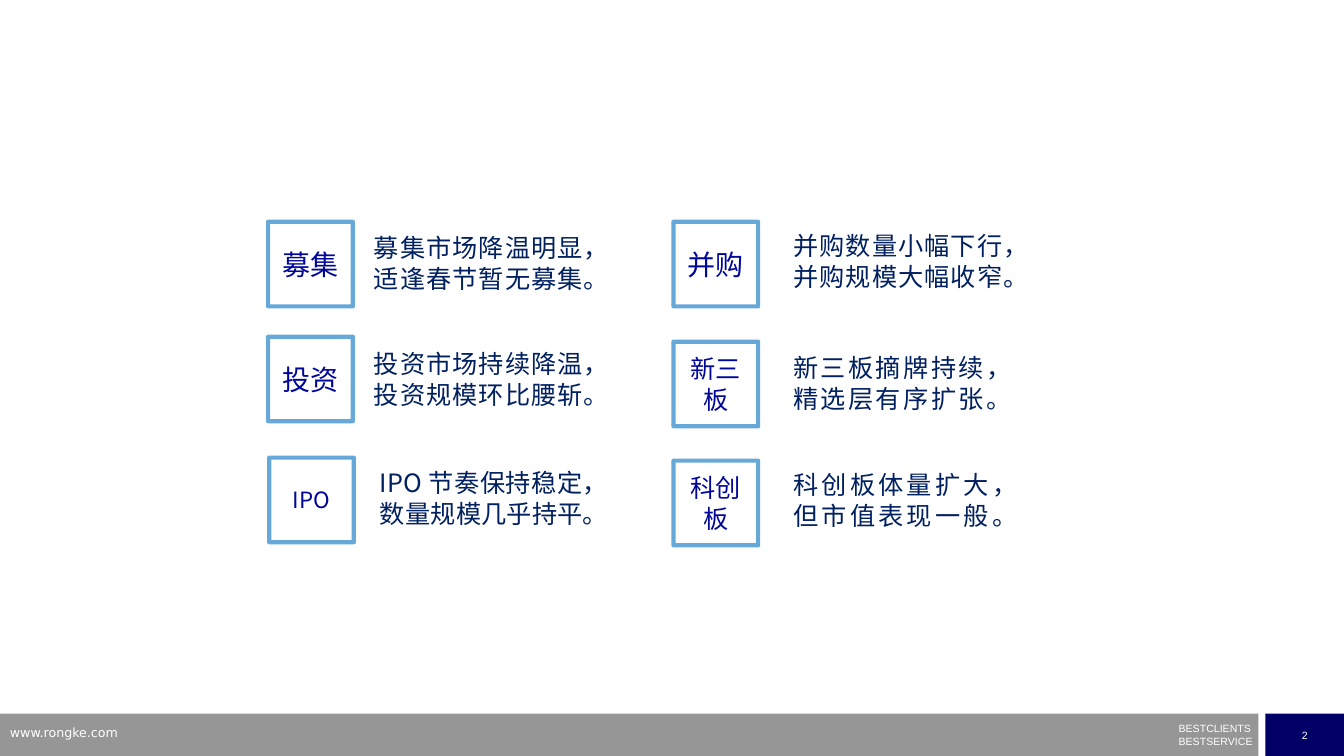
"""Build a market summary slide with six labelled tiles and a footer."""
from lxml.etree import SubElement
from pptx import Presentation
from pptx.dml.color import RGBColor
from pptx.enum.lang import MSO_LANGUAGE_ID
from pptx.enum.shapes import MSO_SHAPE
from pptx.enum.text import MSO_ANCHOR, MSO_AUTO_SIZE, PP_ALIGN
from pptx.oxml.ns import qn
from pptx.util import Inches, Pt

COLORS = {
    "tile": "0070C0", "label": "000798", "text": "002060",
    "bar": "969696", "page": "000066", "white": "FFFFFF",
}


def write(shape, text, size, font, color, align=PP_ALIGN.LEFT):
    frame = shape.text_frame
    frame.text = text
    frame.word_wrap = True
    for para in frame.paragraphs:
        para.alignment = align
        para._p.get_or_add_pPr().set("hangingPunct", "1")
        for run in para.runs:
            run.font.size = Pt(size)
            run.font.name = font
            run.font.color.rgb = RGBColor.from_string(COLORS[color])
            if "CJK" in font:
                run.font.language_id = MSO_LANGUAGE_ID.SIMPLIFIED_CHINESE
                SubElement(run._r.get_or_add_rPr(), qn("a:ea")).set("typeface", font)
    return frame


def block(left, top, width, height, fill=None):
    shape = slide.shapes.add_shape(
        MSO_SHAPE.RECTANGLE, Inches(left), Inches(top), Inches(width), Inches(height))
    shape.shadow.inherit = False
    shape.line.fill.background()
    if fill:
        shape.fill.solid()
        shape.fill.fore_color.rgb = RGBColor.from_string(COLORS[fill])
    else:
        shape.fill.background()
    shape.text_frame.vertical_anchor = MSO_ANCHOR.MIDDLE
    return shape


deck = Presentation()
deck.slide_width, deck.slide_height = Inches(13.33), Inches(7.5)
slide = deck.slides.add_slide(deck.slide_layouts[6])

block(0, 7.08, 12.48, 0.42, "bar")
page = block(12.55, 7.08, 0.78, 0.42, "page")
write(page, "2", 7.5, "Arial", "white", PP_ALIGN.CENTER).word_wrap = False

motto = slide.shapes.add_textbox(Inches(11.69), Inches(7.22), Inches(0.76), Inches(0.2))
frame = write(motto, "BESTCLIENTS\nBESTSERVICE", 7.5, "Arial", "white")
frame.margin_left = frame.margin_right = frame.margin_top = frame.margin_bottom = 0
for para in frame.paragraphs:
    para.line_spacing = 0.5
frame.paragraphs[1].space_before = Pt(4.3)

site = slide.shapes.add_textbox(Inches(0), Inches(7.14), Inches(3.2), Inches(0.26))
write(site, "www.rongke.com", 9, "DejaVu Sans", "white")

topics = [
    ("募集", 20, 2.66, 2.2, "募集市场降温明显，\n适逢春节暂无募集。", 3.61, 2.26, 2.28),
    ("投资", 20, 2.66, 3.34, "投资市场持续降温，\n投资规模环比腰斩。", 3.61, 3.41, 2.28),
    ("IPO", 16, 2.67, 4.54, "IPO 节奏保持稳定，\n数量规模几乎持平。", 3.67, 4.59, 2.21),
    ("并购", 20, 6.68, 2.2, "并购数量小幅下行，\n并购规模大幅收窄。", 7.77, 2.24, 2.28),
    ("新三板", 18, 6.68, 3.39, "新三板摘牌持续，\n精选层有序扩张。", 7.77, 3.45, 2.11),
    ("科创板", 18, 6.68, 4.57, "科创板体量扩大，\n但市值表现一般。", 7.77, 4.61, 2.17),
]
for label, size, left, top, text, start, head, width in topics:
    tile = block(left, top, 0.84, 0.84)
    tile.line.color.rgb = RGBColor.from_string(COLORS["tile"])
    tile.line.width = Pt(3)
    tint = tile.line._ln.find(".//" + qn("a:srgbClr"))
    SubElement(tint, qn("a:alpha")).set("val", "60000")
    write(tile, label, size, "Noto Sans CJK JP", "label", PP_ALIGN.CENTER)
    note = slide.shapes.add_textbox(Inches(start), Inches(head), Inches(width), Inches(0.71))
    frame = write(note, text, 18, "Noto Sans CJK SC", "text", PP_ALIGN.JUSTIFY)
    frame.auto_size = MSO_AUTO_SIZE.SHAPE_TO_FIT_TEXT

deck.save("out.pptx")
